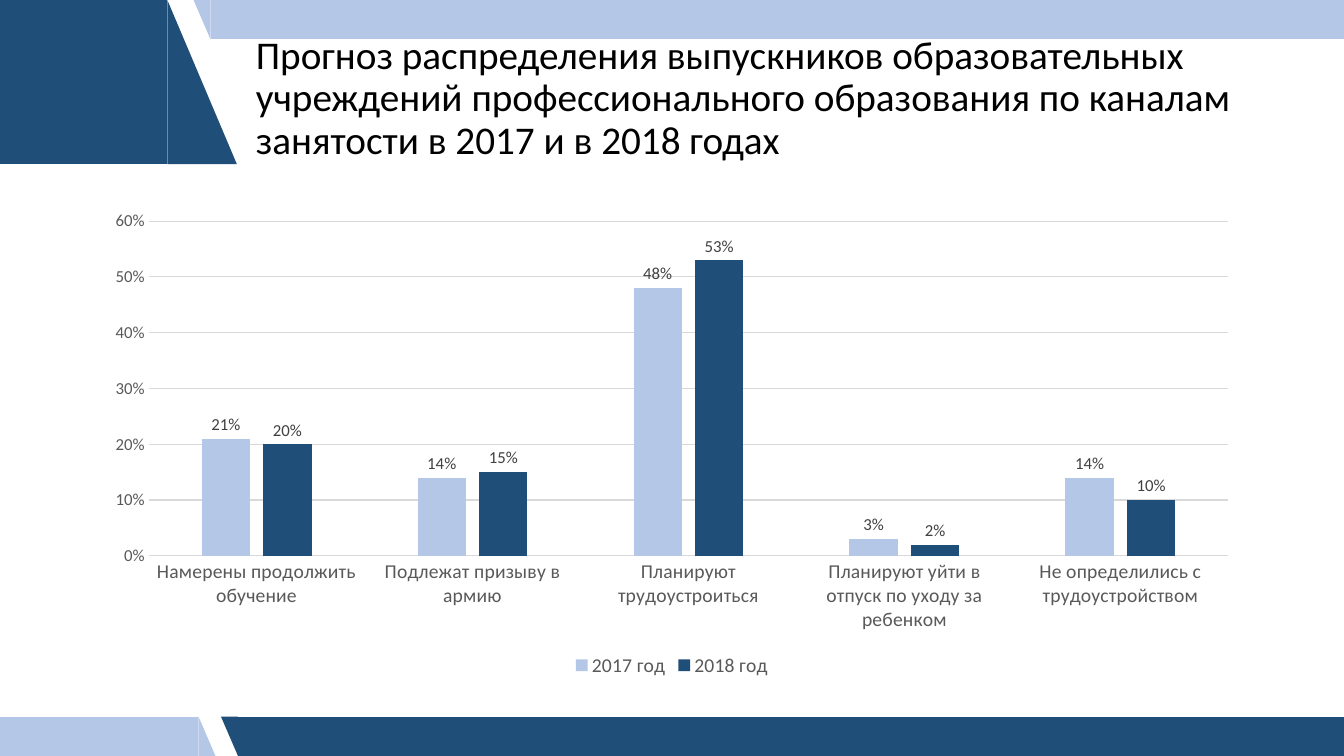
from dataclasses import dataclass

from pptx import Presentation
from pptx.chart.chart import Chart
from pptx.chart.data import CategoryChartData
from pptx.chart.series import BarSeries
from pptx.dml.color import RGBColor
from pptx.enum.chart import XL_CHART_TYPE, XL_LABEL_POSITION, XL_LEGEND_POSITION, XL_TICK_MARK
from pptx.enum.shapes import MSO_SHAPE
from pptx.enum.text import MSO_ANCHOR
from pptx.slide import Slide
from pptx.text.text import Font
from pptx.util import Pt

COLORS = {
    "navy": "1F4E79",
    "light": "B4C7E7",
    "black": "000000",
    "axis": "595959",
    "label": "404040",
    "grid": "D9D9D9",
}
FONT_NAME = "Calibri"
SLIDE_WIDTH, SLIDE_HEIGHT = 960, 540
BAND_HEIGHT, BAND_SLANT = 28.2, 12.2
BOTTOM_TOP = SLIDE_HEIGHT - BAND_HEIGHT


@dataclass(frozen=True)
class Band:
    left: float
    top: float
    width: float
    color: str
    height: float = BAND_HEIGHT
    slant: float = BAND_SLANT
    slant_on_left: bool = False


@dataclass(frozen=True)
class YearSeries:
    name: str
    color: str
    values: tuple[float, ...]


BANDS = (
    Band(170, BOTTOM_TOP, SLIDE_WIDTH - 170, "navy", slant_on_left=True),
    Band(0, BOTTOM_TOP, 141.8, "light"),
    Band(150.4, 0, SLIDE_WIDTH - 150.4, "light", slant_on_left=True),
    Band(0, 0, 119.5, "navy", height=117.3, slant=49.7),
)
CATEGORIES = (
    "Намерены продолжить обучение",
    "Подлежат призыву в армию",
    "Планируют трудоустроиться",
    "Планируют уйти в отпуск по уходу за ребенком",
    "Не определились с трудоустройством",
)
YEARS = (
    YearSeries("2017 год", "light", (0.21, 0.14, 0.48, 0.03, 0.14)),
    YearSeries("2018 год", "navy", (0.2, 0.15, 0.53, 0.02, 0.1)),
)


def rgb(color: str) -> RGBColor:
    return RGBColor.from_string(COLORS[color])


def style_font(font: Font, size: float, color: str) -> None:
    font.name = FONT_NAME
    font.size = Pt(size)
    font.color.rgb = rgb(color)


def add_band(slide: Slide, band: Band) -> None:
    slant_left = band.left - band.slant if band.slant_on_left else band.left + band.width
    parts = (
        (MSO_SHAPE.FLOWCHART_PROCESS, band.left, band.width),
        (MSO_SHAPE.RIGHT_TRIANGLE, slant_left, band.slant),
    )
    for kind, left, width in parts:
        shape = slide.shapes.add_shape(kind, Pt(left), Pt(band.top), Pt(width), Pt(band.height))
        shape.rotation = 180 if band.slant_on_left else 0
        shape.shadow.inherit = False
        shape.fill.solid()
        shape.fill.fore_color.rgb = rgb(band.color)
        shape.line.fill.background()


def add_text(slide: Slide, text: str, *, left: float, top: float, width: float, height: float,
             size: float, color: str, line_spacing: float) -> None:
    box = slide.shapes.add_textbox(Pt(left), Pt(top), Pt(width), Pt(height))
    frame = box.text_frame
    frame.word_wrap = True
    frame.vertical_anchor = MSO_ANCHOR.MIDDLE
    paragraph = frame.paragraphs[0]
    paragraph.line_spacing = line_spacing
    run = paragraph.add_run()
    run.text = text
    style_font(run.font, size, color)


def style_axes(chart: Chart) -> None:
    for axis, size in ((chart.category_axis, 14), (chart.value_axis, 12)):
        axis.major_tick_mark = axis.minor_tick_mark = XL_TICK_MARK.NONE
        style_font(axis.tick_labels.font, size, "axis")
    value_axis = chart.value_axis
    value_axis.minimum_scale, value_axis.maximum_scale = 0, 0.6
    value_axis.major_unit = 0.1
    value_axis.tick_labels.number_format = "0%"
    value_axis.tick_labels.number_format_is_linked = False
    value_axis.format.line.fill.background()
    for line in (chart.category_axis.format.line, value_axis.major_gridlines.format.line):
        line.color.rgb = rgb("grid")
        line.width = Pt(0.75)


def style_series(series: BarSeries, color: str) -> None:
    series.format.fill.solid()
    series.format.fill.fore_color.rgb = rgb(color)
    series.invert_if_negative = False
    labels = series.data_labels
    labels.show_value = True
    labels.number_format = "0%"
    labels.number_format_is_linked = False
    labels.position = XL_LABEL_POSITION.OUTSIDE_END
    style_font(labels.font, 12, "label")


def add_forecast_chart(slide: Slide) -> None:
    data = CategoryChartData(number_format="0%")
    data.categories = CATEGORIES
    for year in YEARS:
        data.add_series(year.name, year.values)
    frame = slide.shapes.add_chart(
        XL_CHART_TYPE.COLUMN_CLUSTERED, Pt(66), Pt(144), Pt(828), Pt(342.7), data
    )
    chart = frame.chart
    chart.has_title = False
    style_font(chart.font, 10, "black")
    style_axes(chart)
    plot = chart.plots[0]
    plot.vary_by_categories = False
    plot.gap_width = 219
    plot.overlap = -27
    for series, year in zip(plot.series, YEARS):
        style_series(series, year.color)
    chart.has_legend = True
    chart.legend.position = XL_LEGEND_POSITION.BOTTOM
    chart.legend.include_in_layout = False
    style_font(chart.legend.font, 14, "axis")


def main() -> None:
    presentation = Presentation()
    presentation.slide_width = Pt(SLIDE_WIDTH)
    presentation.slide_height = Pt(SLIDE_HEIGHT)
    slide = presentation.slides.add_slide(presentation.slide_layouts[6])
    for band in BANDS:
        add_band(slide, band)
    add_text(
        slide,
        "Прогноз распределения выпускников образовательных учреждений "
        "профессионального образования по каналам занятости в 2017 и в 2018 годах",
        left=175.7, top=36, width=725.8, height=69.8,
        size=28, color="black", line_spacing=0.9,
    )
    add_forecast_chart(slide)
    presentation.save("out.pptx")


if __name__ == "__main__":
    main()
